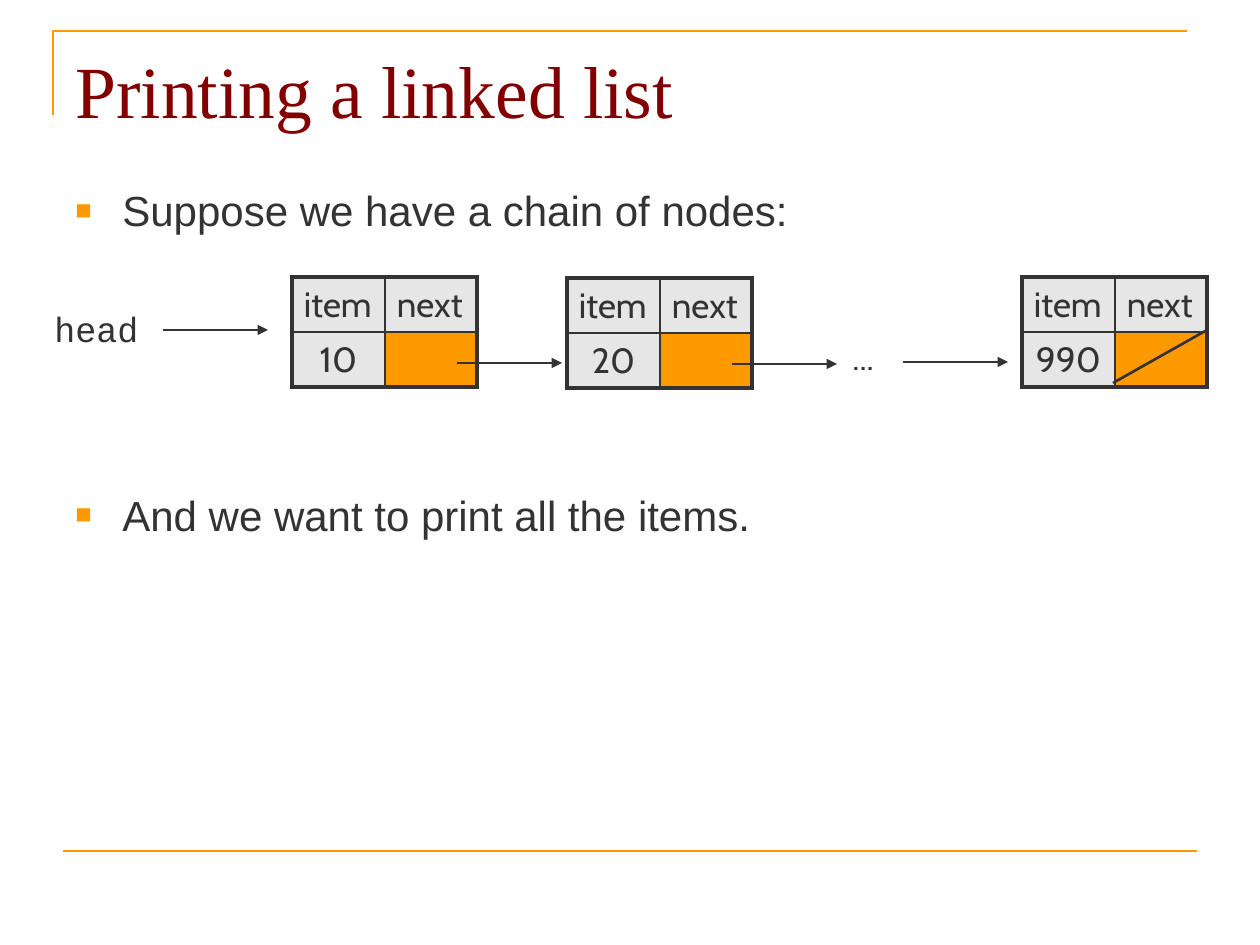
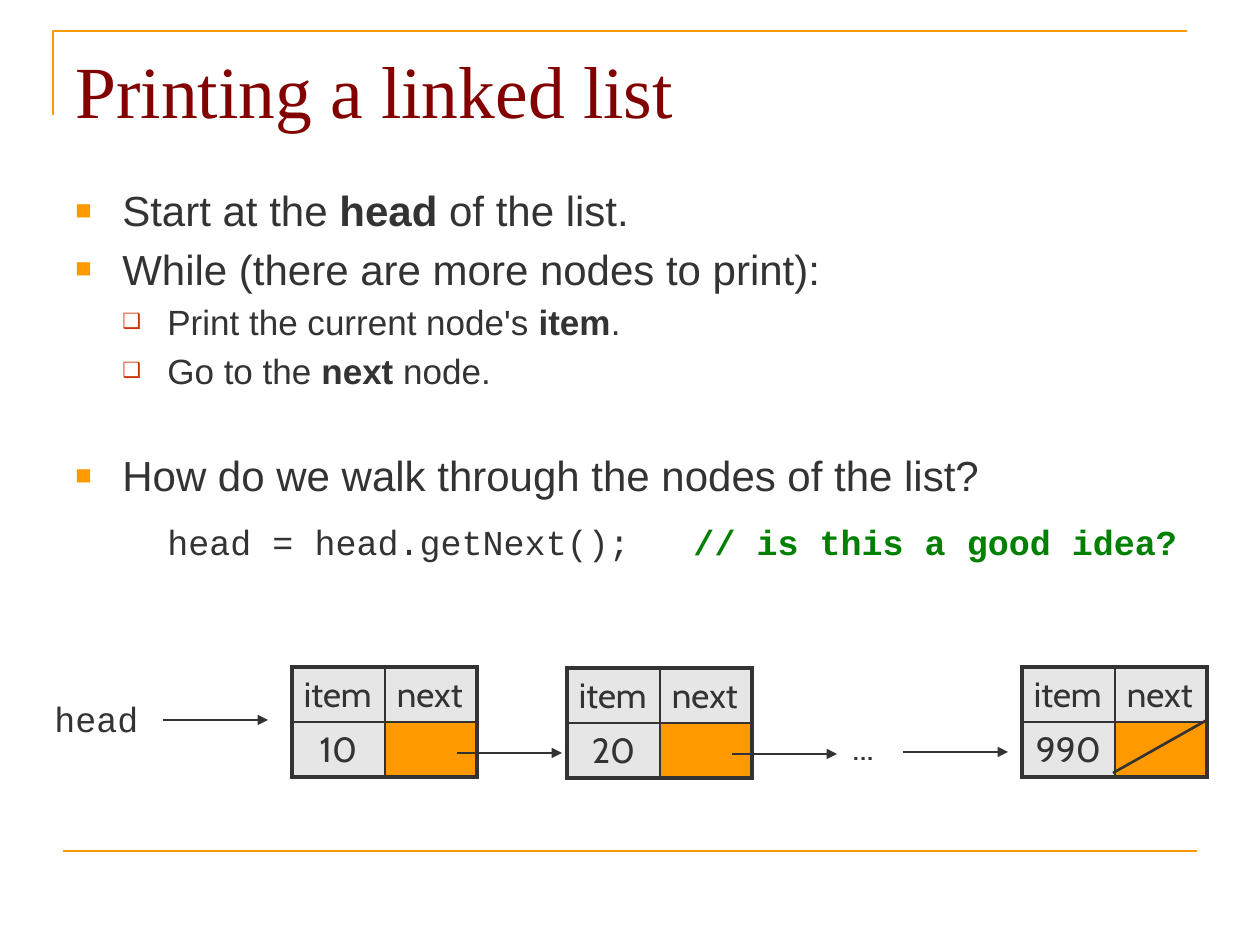
from collections import namedtuple
from dataclasses import dataclass

from lxml.etree import SubElement
from pptx import Presentation
from pptx.dml.color import RGBColor
from pptx.enum.shapes import MSO_CONNECTOR
from pptx.enum.text import MSO_ANCHOR, PP_ALIGN
from pptx.oxml.ns import qn
from pptx.util import Emu, Pt


@dataclass(frozen=True)
class Theme:
    accent: str = "FF9900"
    title: str = "820000"
    ink: str = "333333"
    sub_bullet: str = "CC3300"
    comment: str = "008000"
    cell: str = "E6E6E6"
    title_font: str = "Times New Roman"
    body_font: str = "Arial"
    code_font: str = "Courier New"
    node_font: str = "Cabin"
    title_size: int = 42
    body_size: int = 24
    small_size: int = 20
    line_width: float = 1.5
    outer_border: float = 2.25
    inner_border: float = 1


THEME = Theme()
Box = namedtuple("Box", "left top width height")
Level = namedtuple("Level", "size font margin hanging bullet bullet_color bullet_percent")
Item = namedtuple("Item", "level gap runs")  # gap: px above the paragraph

PX_PER_INCH = 126
SLIDE = Box(0, 0, 1260, 945)
TITLE_BOX = Box(63, 38, 1134, 130)
BODY_BOX = Box(63, 179, 1134, 655)

MAIN = Level(THEME.body_size, THEME.body_font, 47, 47, "■", THEME.accent, 65)
SUB = Level(THEME.small_size, THEME.body_font, 92, 45, "❑", THEME.sub_bullet, 60)
CODE = Level(THEME.small_size, THEME.code_font, 92, 0, None, None, None)

NODE_COLUMNS = (93, 92)
NODE_ROW = 55
ARROW_LENGTH = 105


def px(length):
    return Emu(round(length * 914400 / PX_PER_INCH))


def rgb(color):
    return RGBColor.from_string(color)


# Text
def add_run(paragraph, text, size, font, color=THEME.ink, bold=False):
    run = paragraph.add_run()
    run.text = text
    run.font.size = Pt(size)
    run.font.name = font
    run.font.bold = bold
    run.font.color.rgb = rgb(color)


def add_text_frame(slide, box, wrap=True, margin_top=6):
    shape = slide.shapes.add_textbox(*map(px, box))
    frame = shape.text_frame
    frame.word_wrap = wrap
    frame.margin_top = px(margin_top)
    return frame


def add_label(slide, box, text, font):
    frame = add_text_frame(slide, box, wrap=False)
    add_run(frame.paragraphs[0], text, THEME.small_size, font)


def format_level(paragraph, level):
    properties = paragraph._p.get_or_add_pPr()
    properties.set("marL", str(px(level.margin)))
    properties.set("indent", str(-px(level.hanging)))
    if level.bullet:
        color = SubElement(properties, qn("a:buClr"))
        SubElement(color, qn("a:srgbClr"), val=level.bullet_color)
        SubElement(properties, qn("a:buSzPct"), val=str(level.bullet_percent * 1000))
        SubElement(properties, qn("a:buFont"), typeface=level.font)
        SubElement(properties, qn("a:buChar"), char=level.bullet)
    else:
        SubElement(properties, qn("a:buNone"))


# Lines
def add_line(slide, start, end, color=THEME.ink, arrow=False):
    connector = slide.shapes.add_connector(
        MSO_CONNECTOR.STRAIGHT, *map(px, (*start, *end)))
    connector.line.color.rgb = rgb(color)
    connector.line.width = Pt(THEME.line_width)
    SubElement(connector._element.spPr, qn("a:effectLst"))
    if arrow:
        SubElement(connector.line._get_or_add_ln(), qn("a:tailEnd"), type="triangle")


def add_arrow(slide, left, top):
    add_line(slide, (left, top), (left + ARROW_LENGTH, top), arrow=True)


# Corner rule, bottom rule and title shared by the slides
def add_frame(slide, box):
    left, top = box.left + 53, box.top + 31
    builder = slide.shapes.build_freeform(px(left), px(top + 84))
    builder.add_line_segments(
        [(px(left), px(top)), (px(left + 1134), px(top))], close=False)
    corner = builder.convert_to_shape()
    corner.shadow.inherit = False
    corner.fill.background()
    corner.line.color.rgb = rgb(THEME.accent)
    corner.line.width = Pt(THEME.line_width)

    rule_top = box.top + box.height - 94
    add_line(slide, (box.left + 63, rule_top),
             (box.left + box.width - 63, rule_top), THEME.accent)


def add_title(slide, box, text):
    frame = add_text_frame(slide, box, margin_top=7)
    add_run(frame.paragraphs[0], text, THEME.title_size, THEME.title_font, THEME.title)


# Bulleted body
def add_body(slide, box, items):
    frame = add_text_frame(slide, box)
    for index, item in enumerate(items):
        paragraph = frame.add_paragraph() if index else frame.paragraphs[0]
        paragraph.space_before = px(item.gap)
        format_level(paragraph, item.level)
        for text, *style in item.runs:
            add_run(paragraph, text, item.level.size, item.level.font, *style)


# One list node: a two by two table
def set_borders(cell, row, column):
    outer_sides = {"L": column == 0, "R": column == 1, "T": row == 0, "B": row == 1}
    properties = cell._tc.get_or_add_tcPr()
    for side, outer in outer_sides.items():
        width = THEME.outer_border if outer else THEME.inner_border
        border = SubElement(properties, qn(f"a:ln{side}"), w=str(Pt(width)))
        fill = SubElement(border, qn("a:solidFill"))
        SubElement(fill, qn("a:srgbClr"), val=THEME.ink)


def add_node(slide, left, top, value):
    size = (sum(NODE_COLUMNS), 2 * NODE_ROW)
    table = slide.shapes.add_table(2, 2, *map(px, (left, top, *size))).table
    table.first_row = table.horz_banding = False
    for column, width in zip(table.columns, NODE_COLUMNS):
        column.width = px(width)
    for row, texts in enumerate((("item", "next"), (value, ""))):
        table.rows[row].height = px(NODE_ROW)
        for column, text in enumerate(texts):
            cell = table.cell(row, column)
            cell.vertical_anchor = MSO_ANCHOR.TOP
            # Headers start at the left inset and need the room on the right
            cell.margin_left = px(12)
            cell.margin_right = px(12 if row else 2)
            set_borders(cell, row, column)
            cell.fill.solid()
            cell.fill.fore_color.rgb = rgb(THEME.cell if text else THEME.accent)
            if text:
                paragraph = cell.text_frame.paragraphs[0]
                paragraph.alignment = PP_ALIGN.CENTER if row else PP_ALIGN.LEFT
                add_run(paragraph, text, THEME.small_size, THEME.node_font)


# Chain of nodes from head to the last one
def add_chain(slide, box):
    left, top = box.left, box.top
    add_label(slide, Box(left, top + 24, 111, 55), "head", THEME.code_font)
    add_arrow(slide, left + 121, top + 53)

    for offset, drop, value in ((250, 0, "10"), (525, 1, "20")):
        add_node(slide, left + offset, top + drop, value)
        add_arrow(slide, left + offset + 165, top + drop + 86)

    add_label(slide, Box(left + 798, top + 52, 57, 54), "...", THEME.node_font)
    add_arrow(slide, left + 861, top + 85)

    last = left + 980
    add_node(slide, last, top, "990")
    add_line(slide, (last + 185, top + 53), (last + 91, top + 106))


def add_list_slide(presentation, items, chain_top):
    slide = presentation.slides.add_slide(presentation.slide_layouts[6])
    add_frame(slide, SLIDE)
    add_title(slide, TITLE_BOX, "Printing a linked list")
    add_body(slide, BODY_BOX, items)
    add_chain(slide, Box(42, chain_top, 1165, 110))


CHAIN_ITEMS = (
    Item(MAIN, 0, [("Suppose we have a chain of nodes:",)]),
    Item(MAIN, 254, [("And we want to print all the items.",)]),
)
WALK_ITEMS = (
    Item(MAIN, 0, [("Start at the ",), ("head ", THEME.ink, True), ("of the list.",)]),
    Item(MAIN, 8, [("While (there are more nodes to print):",)]),
    Item(SUB, 7, [("Print the current node's ",), ("item", THEME.ink, True), (".",)]),
    Item(SUB, 7, [("Go to the ",), ("next", THEME.ink, True), (" node.",)]),
    Item(MAIN, 58, [("How do we walk through the nodes of the list?",)]),
    Item(CODE, 20, [("head = head.getNext();   ",),
                    ("// is this a good idea?", THEME.comment, True)]),
)


def main():
    presentation = Presentation()
    presentation.slide_width = px(SLIDE.width)
    presentation.slide_height = px(SLIDE.height)
    add_list_slide(presentation, CHAIN_ITEMS, chain_top=277)
    add_list_slide(presentation, WALK_ITEMS, chain_top=667)
    presentation.save("out.pptx")


if __name__ == "__main__":
    main()
